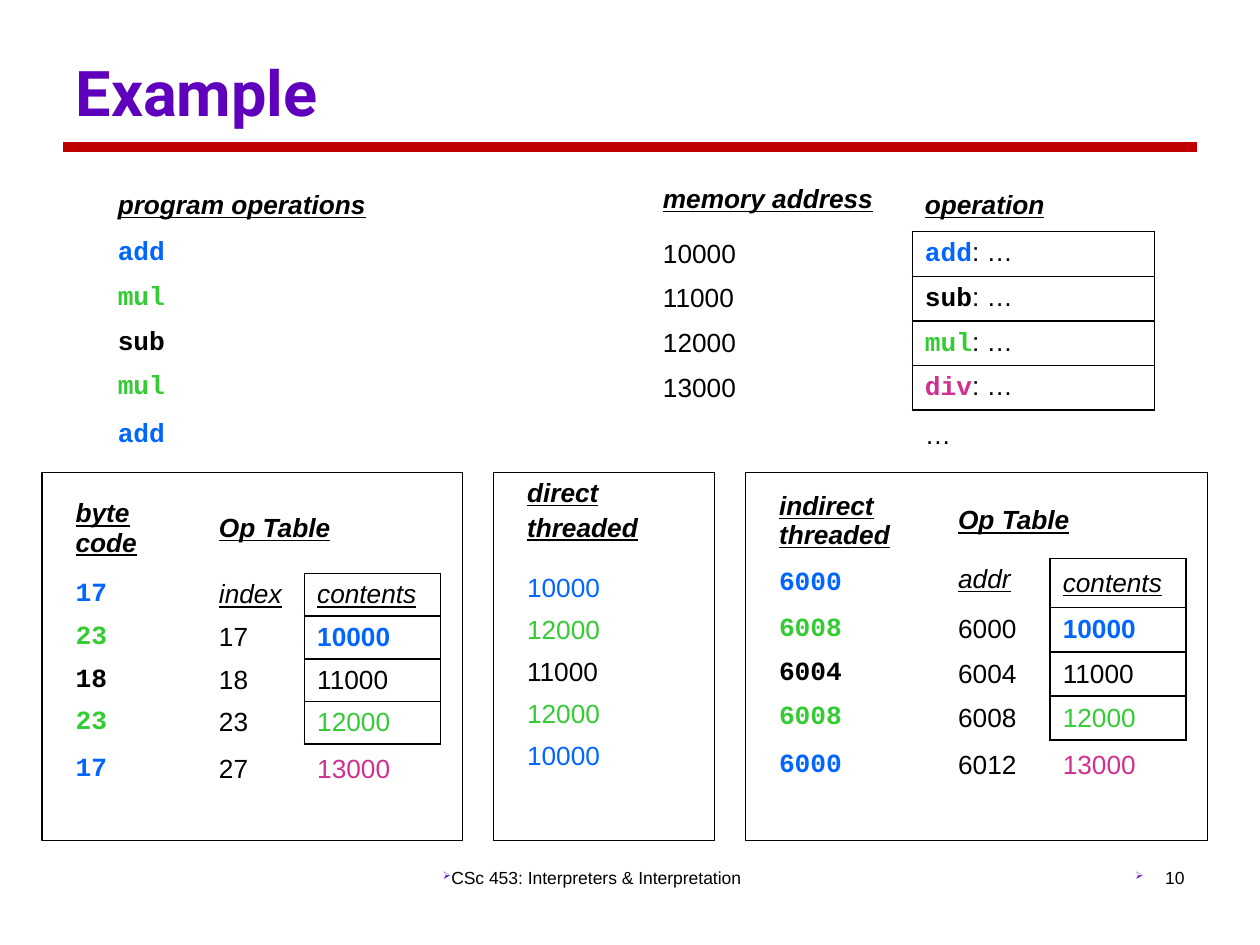
from lxml import etree
from pptx import Presentation
from pptx import util as u
from pptx.dml.color import RGBColor
from pptx.enum import shapes, text
from pptx.oxml import ns

COLORS = {"black": "000000", "blue": "0066FF", "green": "33CC33",
          "pink": "D0308F", "purple": "5E00BC", "red": "C00000"}
# Style: font, bold, italic, underline
STYLES = {"heading": ("Arial", True, True, True),
          "label": ("Arial", False, True, True),
          "plain": ("Arial", False, False, False),
          "strong": ("Arial", True, False, False),
          "code": ("Courier New", True, False, False),
          "title": ("Roboto", True, False, False)}
NO_STYLE_NO_GRID = "{2D5ABB26-0587-4C30-8999-92F81FD0307C}"

PROGRAM = ["add", "mul", "sub", "mul", "add"]
# Operations in memory order: colour, address
OPERATIONS = {"add": ("blue", "10000"), "sub": ("black", "11000"),
              "mul": ("green", "12000"), "div": ("pink", "13000")}
BOXED_ROWS = range(1, 5)


def color(name):
    return RGBColor.from_string(COLORS[name])


def format_run(run, style, color_name, size=15):
    font = run.font
    font.name, font.bold, font.italic, font.underline = STYLES[style]
    font.size = u.Pt(size)
    font.color.rgb = color(color_name)


def add_sub(parent, tag, **attributes):
    return etree.SubElement(parent, ns.qn(tag), attributes)


def add_border(cell, side):
    line = add_sub(cell._tc.get_or_add_tcPr(), "a:ln" + side, w=str(u.Pt(1)))
    fill = add_sub(line, "a:solidFill")
    add_sub(fill, "a:srgbClr", val=COLORS["black"])


def fill_cell(cell, runs):
    """Each run is (text, style, colour); a line break starts a paragraph."""
    frame = cell.text_frame
    paragraph = frame.paragraphs[0]
    for content, style, color_name in runs:
        for number, part in enumerate(content.split("\n")):
            if number:
                paragraph = frame.add_paragraph()
                paragraph.space_before = u.Pt(3)
            run = paragraph.add_run()
            run.text = part
            format_run(run, style, color_name)


def add_grid(slide, left, top, widths, heights, rows, boxed=None, top_cells=()):
    """Borderless table; the cells of column `boxed` are framed."""
    frame = slide.shapes.add_table(
        len(rows), len(widths), u.Cm(left), u.Cm(top),
        u.Cm(sum(widths)), u.Cm(sum(heights)))
    table = frame.table
    table.first_row = table.horz_banding = False
    table._tbl.tblPr.find(ns.qn("a:tableStyleId")).text = NO_STYLE_NO_GRID
    for column, width in zip(table.columns, widths):
        column.width = u.Cm(width)
    for row, height in zip(table.rows, heights):
        row.height = u.Cm(height)

    frames = {(r, boxed) for r in BOXED_ROWS}
    for r, row in enumerate(rows):
        for c, runs in enumerate(row):
            cell = table.cell(r, c)
            neighbours = {"L": (r, c - 1), "R": (r, c + 1),
                          "T": (r - 1, c), "B": (r + 1, c)}
            for side, place in neighbours.items():
                if (r, c) in frames or place in frames:
                    add_border(cell, side)
            cell.fill.background()
            cell.vertical_anchor = (text.MSO_ANCHOR.TOP if (r, c) in top_cells
                                    else text.MSO_ANCHOR.MIDDLE)
            fill_cell(cell, runs)
    if len(widths) > 1:  # the second column is an empty gap
        table.cell(0, 1).merge(table.cell(len(rows) - 1, 1))
    return table


def heading(content):
    return [(content, "heading", "black")]


def plain(content, color_name="black"):
    return [(content, "plain", color_name)]


def code(content, operation):
    return [(content, "code", OPERATIONS[operation][0])]


def program_rows():
    rows = [[heading("program operations"), [], heading("memory address"),
             heading("operation")]]
    for step, (operation, (_, address)) in zip(PROGRAM, OPERATIONS.items()):
        rows.append([code(step, step), [], plain(address),
                     code(operation, operation) + plain(": …")])
    rows.append([code(PROGRAM[-1], PROGRAM[-1]), [], [], plain("…")])
    return rows


def op_table_rows(title, key_label, keys):
    rows = [[heading(title), [], heading("Op Table"), []],
            [code(keys[PROGRAM[0]], PROGRAM[0]), [],
             [(key_label, "label", "black")], [("contents", "label", "black")]]]
    for step, operation in zip(PROGRAM[1:], OPERATIONS):
        color_name, address = OPERATIONS[operation]
        style = "strong" if operation == "add" else "plain"
        rows.append([code(keys[step], step), [], plain(keys[operation]),
                     [(address, style, color_name)]])
    return rows


def direct_rows():
    return [[heading("direct\nthreaded")]] + [
        [plain(OPERATIONS[step][1], OPERATIONS[step][0])] for step in PROGRAM]


def add_frame(slide, left, width):
    shape = slide.shapes.add_shape(
        shapes.MSO_SHAPE.RECTANGLE, u.Cm(left), u.Cm(9.53), u.Cm(width), u.Cm(7.41))
    shape.shadow.inherit = False
    shape.fill.background()
    shape.line.color.rgb = color("black")
    shape.line.width = u.Pt(0.75)


def add_footer(slide, content, left, width, align, hanging):
    box = slide.shapes.add_textbox(u.Cm(left), u.Cm(17.35), u.Cm(width), u.Cm(1.27))
    box.text_frame.word_wrap = True
    paragraph = box.text_frame.paragraphs[0]
    paragraph.text = content
    paragraph.alignment = align
    format_run(paragraph.runs[0], "plain", "black", 10)
    # Small arrow bullet
    properties = paragraph._p.get_or_add_pPr()
    properties.set("marL", str(u.Cm(hanging)))
    properties.set("indent", str(-u.Cm(hanging)))
    bullet_color = add_sub(properties, "a:buClr")
    add_sub(bullet_color, "a:srgbClr", val=COLORS["purple"])
    add_sub(properties, "a:buSzPct", val="60000")
    add_sub(properties, "a:buFont", typeface="Wingdings")
    add_sub(properties, "a:buChar", char="Ø")


def add_title(slide):
    title = slide.shapes.title
    title.left, title.top = u.Cm(1.27), u.Cm(0.33)
    title.width, title.height = u.Cm(20.96), u.Cm(2.41)
    title.text_frame.text = "Example"
    title.text_frame.vertical_anchor = text.MSO_ANCHOR.BOTTOM
    paragraph = title.text_frame.paragraphs[0]
    paragraph.alignment = text.PP_ALIGN.LEFT
    paragraph.line_spacing = 1.0
    format_run(paragraph.runs[0], "title", "purple", 36)

    # Rule below the title
    rule = slide.shapes.add_connector(
        shapes.MSO_CONNECTOR.STRAIGHT, u.Cm(1.27), u.Cm(2.96), u.Cm(24.13), u.Cm(2.96))
    rule.line.color.rgb = color("red")
    rule.line.width = u.Pt(5.5)
    add_sub(rule._element.spPr, "a:effectLst")


def main():
    presentation = Presentation()
    presentation.slide_width, presentation.slide_height = u.Cm(25.4), u.Cm(19.05)
    slide = presentation.slides.add_slide(presentation.slide_layouts[5])
    add_title(slide)

    # Program and memory
    add_grid(slide, 2.12, 3.6, [5.61, 5.38, 5.28, 4.88], [1.07] + [0.9] * 5,
             program_rows(), boxed=3, top_cells={(0, 2)})

    # Byte code
    indexes = {"add": "17", "sub": "18", "mul": "23", "div": "27"}
    table = add_grid(slide, 1.27, 9.74, [2.13, 0.76, 1.98, 2.74],
                     [1.82] + [0.86] * 5,
                     op_table_rows("byte code", "index", indexes), boxed=3)
    table.cell(0, 2).merge(table.cell(0, 3))

    # Direct threaded code
    add_grid(slide, 10.37, 9.53, [3.81], [1.9] + [0.85] * 5, direct_rows(),
             top_cells={(0, 0)})

    # Indirect threaded code
    addresses = {name: str(6000 + 4 * i) for i, name in enumerate(OPERATIONS)}
    table = add_grid(slide, 15.45, 9.74, [2.97, 0.64, 2.11, 2.74],
                     [1.52, 0.99] + [0.89] * 4,
                     op_table_rows("indirect threaded", "addr", addresses),
                     boxed=3, top_cells={(1, 2)})
    table.cell(0, 2).merge(table.cell(0, 3))

    # Frames around the three schemes
    for left, width in [(0.85, 8.47), (9.95, 4.45), (15.03, 9.31)]:
        add_frame(slide, left, width)

    # Footer
    add_footer(slide, "CSc 453: Interpreters & Interpretation", 8.68, 8.05,
               text.PP_ALIGN.LEFT, 0)
    add_footer(slide, "10", 18.2, 5.93, text.PP_ALIGN.RIGHT, 0.6)
    presentation.save("out.pptx")


if __name__ == "__main__":
    main()
